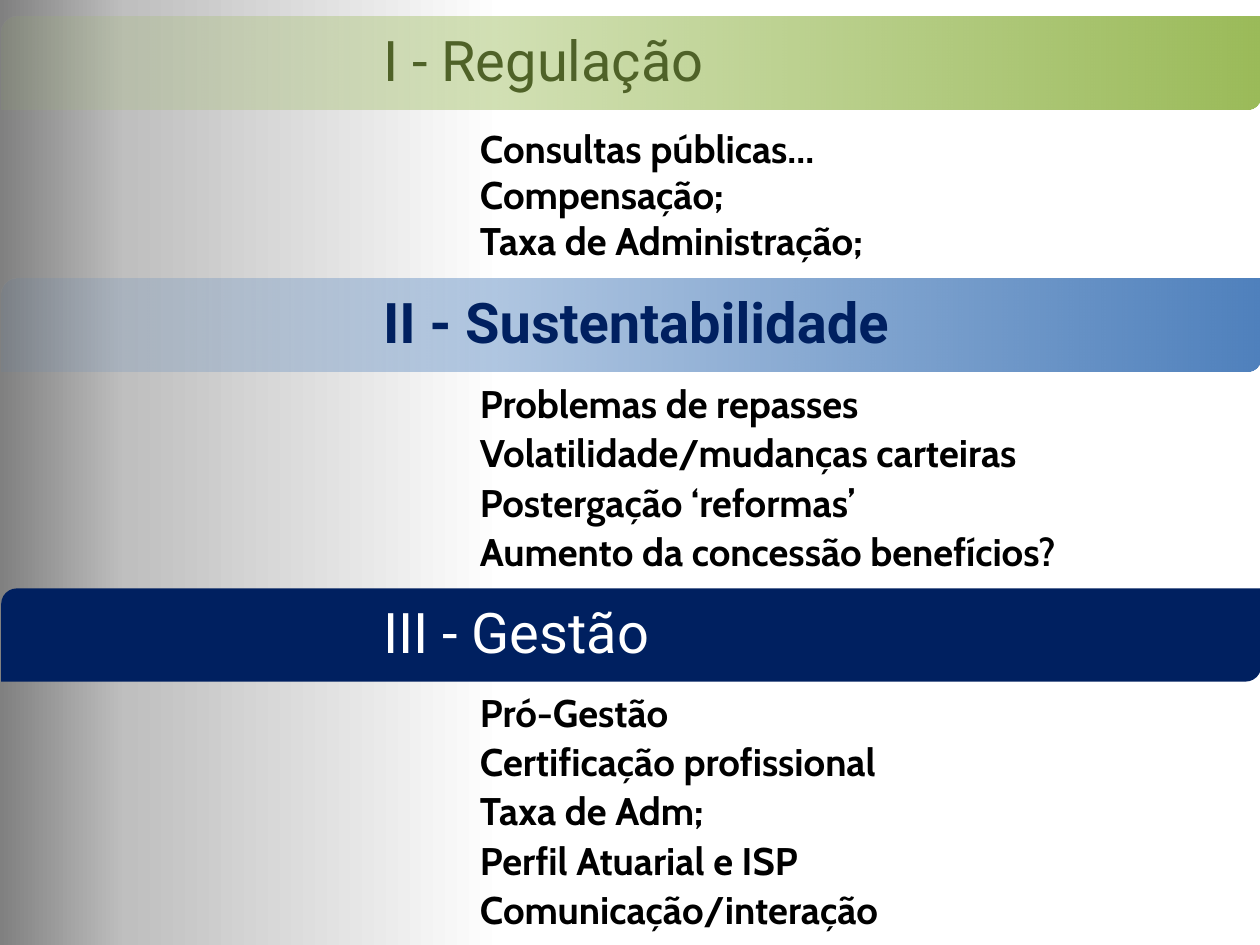
import pptx
import pptx.dml.color
import pptx.enum.shapes
import pptx.enum.text
import pptx.oxml
import pptx.oxml.ns
import pptx.util
from lxml import etree

Inches = pptx.util.Inches
Pt = pptx.util.Pt
RGBColor = pptx.dml.color.RGBColor
qn = pptx.oxml.ns.qn

WHITE = RGBColor(0xFF, 0xFF, 0xFF)
SILVER = RGBColor(0xBF, 0xBF, 0xBF)
GRAY = RGBColor(0x80, 0x80, 0x80)
BLACK = RGBColor(0, 0, 0)
GREEN = RGBColor(0x9B, 0xBB, 0x59)
OLIVE = RGBColor(0x4F, 0x62, 0x28)
BLUE = RGBColor(0x4F, 0x81, 0xBD)
NAVY = RGBColor(0, 0x20, 0x60)

LEFT, WIDTH, BAND = 0.01, 10, 0.74

# Band top, list bottom, band colour, fades, title, title colour, title bold, items
PARTS = [
    (0.13, 2.21, GREEN, True, "I - Regulação", OLIVE, False,
     ["Consultas públicas...", "Compensação;", "Taxa de Administração;"]),
    (2.21, 4.67, BLUE, True, "II - Sustentabilidade", NAVY, True,
     ["Problemas de repasses", "Volatilidade/mudanças carteiras",
      "Postergação ‘reformas’", "Aumento da concessão benefícios?"]),
    (4.67, 7.5, NAVY, False, "III - Gestão", WHITE, False,
     ["Pró-Gestão", "Certificação profissional", "Taxa de Adm;",
      "Perfil Atuarial e ISP", "Comunicação/interação"]),
]


def set_grad(fill, root, stops, angle):
    """Fill with stops of (percent, colour, opacity percent)."""
    fill.gradient()
    fill.gradient_angle = angle
    group = root.find(".//" + qn("a:gsLst"))
    for old in list(group):
        group.remove(old)
    for place, color, alpha in stops:
        stop = etree.SubElement(group, qn("a:gs"), pos=str(place * 1000))
        tint = etree.SubElement(stop, qn("a:srgbClr"), val=str(color))
        if alpha < 100:
            etree.SubElement(tint, qn("a:alpha"), val=str(alpha * 1000))


def add_band(slide, top, color, fades):
    band = slide.shapes.add_shape(
        pptx.enum.shapes.MSO_SHAPE.ROUND_2_DIAG_RECTANGLE,
        Inches(LEFT), Inches(top), Inches(WIDTH), Inches(BAND))
    band.shadow.inherit = False
    band.line.fill.background()
    if fades:
        set_grad(band.fill, band._element,
                 [(0, color, 10), (100, color, 100)], 0)
    else:
        band.fill.solid()
        band.fill.fore_color.rgb = color


def add_text(slide, box, insets, lines, font, size, color, bold,
             after=0, hang=False):
    shape = slide.shapes.add_textbox(*map(Inches, box))
    frame = shape.text_frame
    frame.word_wrap = True
    frame.vertical_anchor = pptx.enum.text.MSO_ANCHOR.MIDDLE
    (frame.margin_left, frame.margin_top,
     frame.margin_right, frame.margin_bottom) = map(Inches, insets)
    for i, line in enumerate(lines):
        para = frame.paragraphs[0] if i == 0 else frame.add_paragraph()
        para.text = line
        if after:
            para.line_spacing = 0.9
            para.space_after = Pt(after)
        if hang:
            para.level = 1
            props = para._p.get_or_add_pPr()
            props.set("marL", str(Inches(0.25)))
            props.set("indent", str(Inches(-0.25)))
        para.font.name = font
        para.font.size = Pt(size)
        para.font.bold = bold
        para.font.color.rgb = color


def main():
    deck = pptx.Presentation()
    deck.slide_width, deck.slide_height = Inches(10), Inches(7.5)
    slide = deck.slides.add_slide(deck.slide_layouts[6])

    # Backdrop, fading from right to left
    set_grad(slide.background.fill, slide._element,
             [(60, WHITE, 100), (90, SILVER, 100), (100, GRAY, 100)], 180)

    # Each topic: band, title, list
    for n, (top, end, fill, fades, title, ink, bold, items) in enumerate(PARTS):
        add_band(slide, top, fill, fades)
        add_text(slide, (0.04, top + 0.04, 9.93, 0.67),
                 (3, 0.13, 0.13, 0.13), [title], "Roboto", 32, ink, bold,
                 after=11.2)
        start = top + BAND
        add_text(slide, (LEFT, start, WIDTH, end - start),
                 (3.8, 0.2, 0.17, 0.2), items, "Cabin", 22, BLACK, True,
                 after=4.4 if n else 0, hang=n > 0)

    deck.save("out.pptx")


if __name__ == "__main__":
    main()
